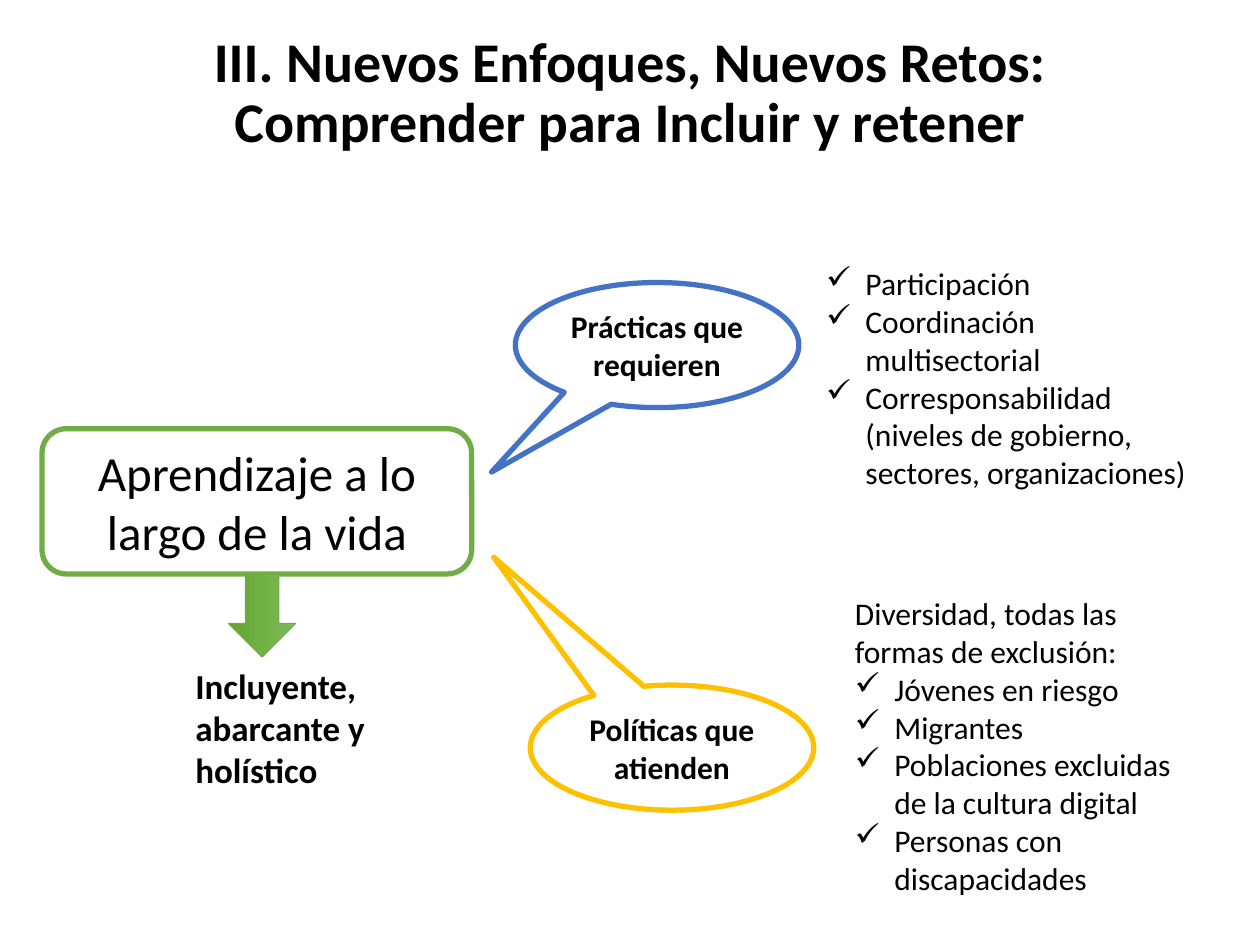
from copy import deepcopy
from dataclasses import dataclass

from lxml.etree import SubElement
from pptx import Presentation
from pptx.dml.color import RGBColor
from pptx.enum.shapes import MSO_SHAPE as Shape
from pptx.enum.text import MSO_ANCHOR as Anchor, MSO_AUTO_SIZE as AutoSize, PP_ALIGN as Align
from pptx.oxml.ns import qn
from pptx.util import Pt


@dataclass(frozen=True)
class Theme:
    font: str = "Calibri"
    text: str = "000000"
    paper: str = "FFFFFF"
    green: str = "70AD47"
    blue: str = "4472C4"
    gold: str = "FFC000"
    arrow: tuple = ("81B861", "6FB242", "62A336")
    title: int = 32
    main: int = 28
    result: int = 20
    body: int = 18


theme = Theme()


def write(sp, lines, size, bold=False, align=Align.LEFT, anchor=Anchor.TOP, bullets_from=None):
    tf = sp.text_frame
    tf.text = "\n".join(lines)
    tf.word_wrap = True
    tf.vertical_anchor = anchor
    for i, p in enumerate(tf.paragraphs):
        p.alignment = align
        for r in p.runs:
            r.font.name = theme.font
            r.font.size = Pt(size)
            r.font.bold = bold
            r.font.color.rgb = RGBColor.from_string(theme.text)
        if bullets_from is not None and i >= bullets_from:
            pPr = p._p.get_or_add_pPr()
            pPr.set("marL", str(Pt(22.5)))
            pPr.set("indent", str(-Pt(22.5)))
            SubElement(pPr, qn("a:buChar"), char="✓")
    return tf


def outlined(kind, box, color, text, size, bold):
    sp = s.shapes.add_shape(kind, *map(Pt, box))
    sp.shadow.inherit = False
    sp.fill.solid()
    sp.fill.fore_color.rgb = RGBColor.from_string(theme.paper)
    sp.line.color.rgb = RGBColor.from_string(color)
    sp.line.width = Pt(3)
    write(sp, [text], size, bold, Align.CENTER, Anchor.MIDDLE)
    return sp


prs = Presentation()
prs.slide_width, prs.slide_height = Pt(720), Pt(540)
s = prs.slides.add_slide(prs.slide_layouts[5])

title = s.shapes.title
title.left, title.top, title.width, title.height = map(Pt, (49.5, 13, 621, 82))
tf = write(title, ["III. Nuevos Enfoques, Nuevos Retos: Comprender para Incluir y retener"],
           theme.title, True, Align.CENTER, Anchor.MIDDLE)
tf.paragraphs[0].line_spacing = 0.9

outlined(Shape.ROUNDED_RECTANGLE, (24, 245, 245.5, 83), theme.green,
         "Aprendizaje a lo largo de la vida", theme.main, False)

callouts = [
    ((294.5, 161.5, 162, 71.5), theme.blue, "Prácticas que requieren", (-0.584, 1.015)),
    ((303, 391.5, 162, 71.5), theme.gold, "Políticas que atienden", (-0.629, -1.522)),
]
for box, color, text, tip in callouts:
    sp = outlined(Shape.OVAL_CALLOUT, box, color, text, theme.body, True)
    sp.adjustments[0], sp.adjustments[1] = tip

notes = [
    ((104.5, 376, 124.5, 80), theme.result, True, None, ["Incluyente, abarcante y holístico"]),
    ((465, 147.5, 227.5, 138), theme.body, False, 0, [
        "Participación",
        "Coordinación multisectorial",
        "Corresponsabilidad (niveles de gobierno, sectores, organizaciones)",
    ]),
    ((481.5, 336, 211, 181.5), theme.body, False, 1, [
        "Diversidad, todas las formas de exclusión:",
        "Jóvenes en riesgo",
        "Migrantes",
        "Poblaciones excluidas de la cultura digital",
        "Personas con discapacidades",
    ]),
]
for box, size, bold, bullets_from, lines in notes:
    sp = s.shapes.add_textbox(*map(Pt, box))
    tf = write(sp, lines, size, bold, bullets_from=bullets_from)
    tf.auto_size = AutoSize.SHAPE_TO_FIT_TEXT

arrow = s.shapes.add_shape(Shape.RIGHT_ARROW, Pt(126), Pt(332.5), Pt(47.5), Pt(38.5))
arrow.rotation = 90
arrow.shadow.inherit = False
arrow.line.color.rgb = RGBColor.from_string(theme.green)
arrow.line.width = Pt(0.5)
arrow.fill.gradient()
arrow.fill.gradient_angle = 270
gs = arrow.element.spPr.find(".//" + qn("a:gs"))
middle = deepcopy(gs)
middle.set("pos", "50000")
gs.addnext(middle)
for stop, color in zip(arrow.fill.gradient_stops, theme.arrow):
    stop.color.rgb = RGBColor.from_string(color)

prs.save("out.pptx")
